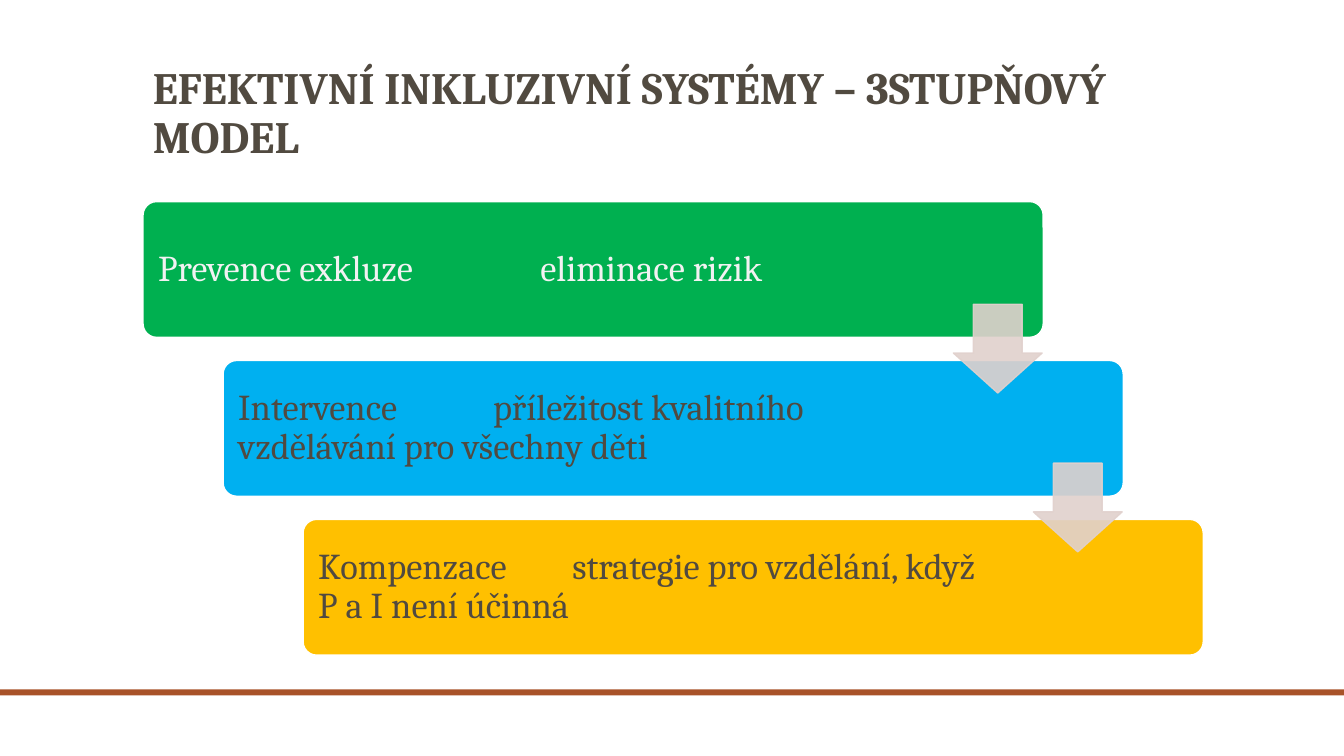
from lxml import etree
from pptx import Presentation
from pptx.dml.color import RGBColor
from pptx.enum.shapes import MSO_SHAPE
from pptx.enum.text import MSO_ANCHOR, MSO_AUTO_SIZE, PP_ALIGN
from pptx.oxml.ns import qn
from pptx.util import Pt

RECTANGLE = MSO_SHAPE.RECTANGLE
ROUNDED = MSO_SHAPE.ROUNDED_RECTANGLE
DOWN_ARROW = MSO_SHAPE.DOWN_ARROW
LEFT = PP_ALIGN.LEFT
MIDDLE, BOTTOM = MSO_ANCHOR.MIDDLE, MSO_ANCHOR.BOTTOM

WHITE = RGBColor(0xFF, 0xFF, 0xFF)
OFF_WHITE = RGBColor(0xF2, 0xF2, 0xF2)
BROWN = RGBColor(0x51, 0x4A, 0x40)
RUST = RGBColor(0xA8, 0x52, 0x29)
GREEN = RGBColor(0x00, 0xB0, 0x50)
BLUE = RGBColor(0x00, 0xB0, 0xF0)
AMBER = RGBColor(0xFF, 0xC0, 0x00)
BLUSH = RGBColor(0xE1, 0xD1, 0xCD)

STEP_X, STEP_Y = 57.15, 113.5


def add_block(kind, left, top, width, height, color, line_color):
    block = slide.shapes.add_shape(kind, Pt(left), Pt(top), Pt(width), Pt(height))
    block.shadow.inherit = False
    block.fill.solid()
    block.fill.fore_color.rgb = color
    block.line.color.rgb = line_color
    block.line.width = Pt(1)
    return block


def write_text(frame, text, frame_format, font_format):
    for name, value in frame_format.items():
        setattr(frame, name, value)
    paragraph = frame.paragraphs[0]
    paragraph.text = text
    paragraph.alignment = LEFT
    paragraph.line_spacing = 0.9
    for run in paragraph.runs:
        run.font.color.rgb = font_format["color"]
        for name in ("name", "size", "bold"):
            setattr(run.font, name, font_format[name])
    return paragraph


prs = Presentation()
prs.slide_width, prs.slide_height = Pt(960), Pt(540)
slide = prs.slides.add_slide(prs.slide_layouts[5])

# Footer rule
footer_rule = add_block(RECTANGLE, 0, 492.5, 960, 4.3, RUST, RUST)
footer_rule.line.fill.background()

# Title
title = slide.shapes.title
title.left, title.top, title.width, title.height = Pt(102), Pt(30), Pt(756), Pt(90)
write_text(
    title.text_frame,
    "EFEKTIVNÍ INKLUZIVNÍ SYSTÉMY – 3STUPŇOVÝ MODEL",
    {"word_wrap": True, "auto_size": MSO_AUTO_SIZE.NONE, "vertical_anchor": BOTTOM},
    {"name": "Cambria", "size": Pt(32), "bold": True, "color": BROWN},
)

# Three tiers, each with a tab stop for its explanation
tiers = [
    ("Prevence exkluze\teliminace rizik", GREEN, OFF_WHITE, 273),
    ("Intervence\tpříležitost kvalitního\vvzdělávání pro všechny děti", BLUE, BROWN, 182),
    ("Kompenzace\tstrategie pro vzdělání, když\vP a I není účinná", AMBER, BROWN, 181.5),
]
tier_frame = {
    "word_wrap": True, "vertical_anchor": MIDDLE,
    "margin_left": Pt(8), "margin_right": Pt(8),
    "margin_top": Pt(8), "margin_bottom": Pt(8),
}
for i, (text, color, text_color, tab_stop) in enumerate(tiers):
    tier = add_block(ROUNDED, 102.2 + i * STEP_X, 144 + i * STEP_Y, 643, 97, color, WHITE)
    tier.adjustments[0] = 0.1
    paragraph = write_text(
        tier.text_frame, text, tier_frame,
        {"name": "Cambria", "size": Pt(26), "bold": False, "color": text_color},
    )
    tabs = etree.SubElement(paragraph._p.get_or_add_pPr(), qn("a:tabLst"))
    etree.SubElement(tabs, qn("a:tab"), pos=str(Pt(tab_stop)), algn="l")

# Translucent arrows leading from tier to tier
for i in range(len(tiers) - 1):
    arrow = add_block(DOWN_ARROW, 681 + i * STEP_X, 217.3 + i * STEP_Y, 63.4, 63.4, BLUSH, BLUSH)
    arrow.adjustments[0] = 0.55
    arrow.adjustments[1] = 0.45
    for tint in arrow._element.spPr.iter(qn("a:srgbClr")):
        etree.SubElement(tint, qn("a:alpha"), val="90000")

prs.save("out.pptx")
